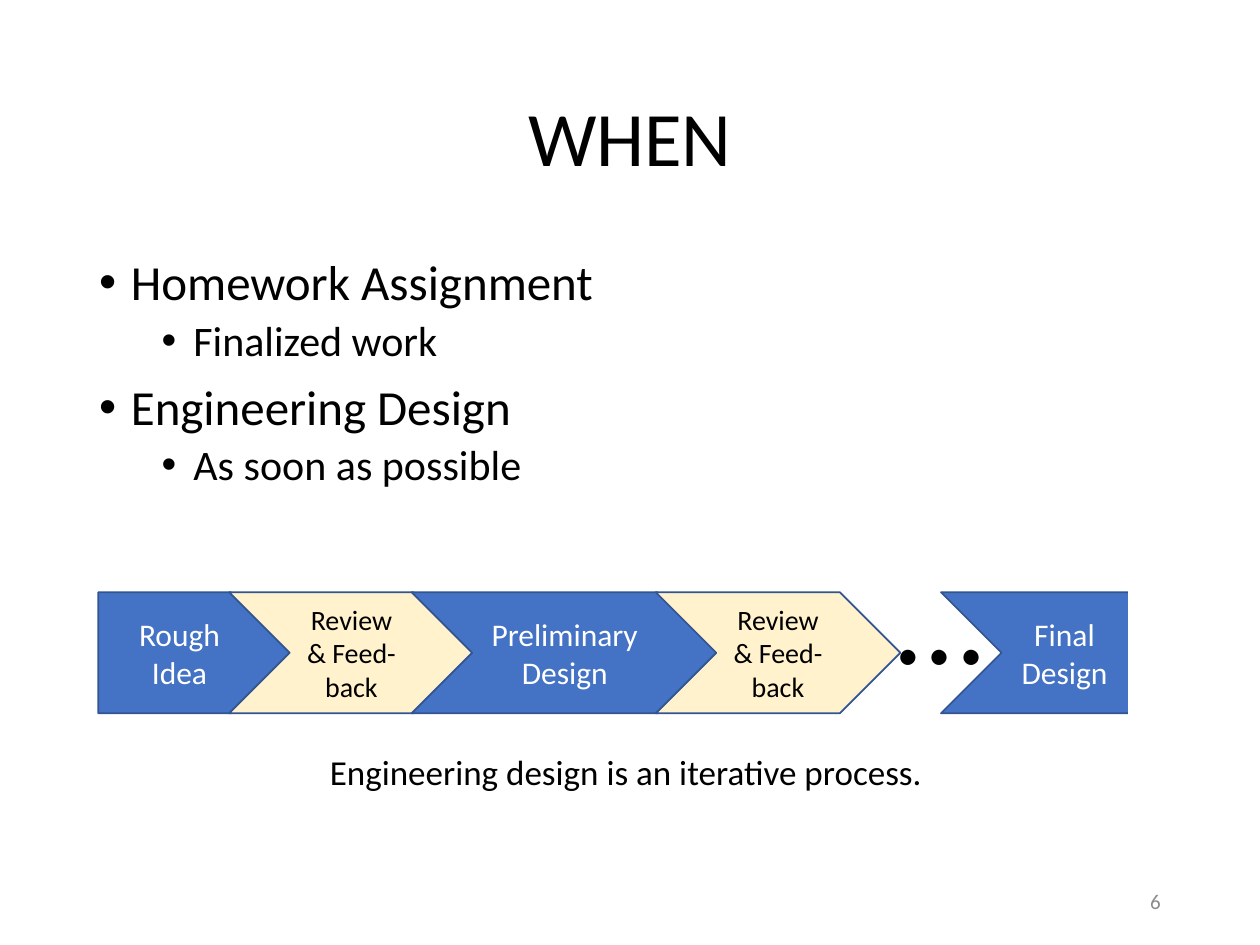
from lxml.etree import SubElement
from pptx import Presentation
from pptx.dml.color import RGBColor
from pptx.enum.shapes import MSO_SHAPE as Shape
from pptx.enum.text import MSO_ANCHOR as Anchor, PP_ALIGN as Align
from pptx.oxml.ns import qn
from pptx.util import Cm, Pt

FONT = "Calibri"
BLACK, WHITE, GREY = "000000", "FFFFFF", "8C8C8C"
BLUE, CREAM, OUTLINE = "4472C4", "FFF2CC", "325491"

ROW_LEFT, ROW_TOP, ROW_HEIGHT = 1.98, 11.94, 2.44
OVERLAP = 1.25

# level: text size, space before, left margin
LEVELS = {0: (28, 10, 0.64), 1: (24, 5, 1.9)}
BULLETS = [
    (0, "Homework Assignment"),
    (1, "Finalized work"),
    (0, "Engineering Design"),
    (1, "As soon as possible"),
]

DRAFT = {"fill": BLUE, "size": 18, "color": WHITE}
REVIEW = {"fill": CREAM, "size": 16, "color": BLACK}
# text, preset, width, gap to the next step, look
STEPS = [
    ("Rough Idea", Shape.PENTAGON, 3.89, -OVERLAP, DRAFT),
    ("Review & Feed- back", Shape.CHEVRON, 4.93, -OVERLAP, REVIEW),
    ("Preliminary Design", Shape.CHEVRON, 6.17, -OVERLAP, DRAFT),
    ("Review & Feed- back", Shape.CHEVRON, 4.93, 0.82, REVIEW),
    ("Final Design", Shape.CHEVRON, 4.98, 0, DRAFT),
]


def rgb(color):
    return RGBColor.from_string(color)


def lengths(*values):
    return [Cm(value) for value in values]


def write(para, text, size, color=BLACK, **formats):
    """Add a run to the paragraph and set the paragraph's formats."""
    for name, value in formats.items():
        setattr(para, name, value)
    span = para.add_run()
    span.text = text
    for name, value in {"name": FONT, "size": Pt(size)}.items():
        setattr(span.font, name, value)
    span.font.color.rgb = rgb(color)


def add_title(page, text):
    title = page.shapes.title
    place = zip(("left", "top", "width", "height"),
                lengths(1.75, 1.02, 21.9, 3.68))
    for name, value in place:
        setattr(title, name, value)
    title.text_frame.vertical_anchor = Anchor.MIDDLE
    write(title.text_frame.paragraphs[0], text, 44,
          alignment=Align.CENTER, line_spacing=0.9)


def add_text(page, place, text, size, color=BLACK, wrap=False,
             anchor=Anchor.TOP, align=Align.LEFT):
    frame = page.shapes.add_textbox(*lengths(*place)).text_frame
    frame.word_wrap = wrap
    frame.vertical_anchor = anchor
    write(frame.paragraphs[0], text, size, color, alignment=align)


def set_bullet(para, margin):
    properties = para._p.get_or_add_pPr()
    properties.set("marL", str(Cm(margin)))
    properties.set("indent", str(-Cm(0.64)))
    SubElement(properties, qn("a:buFont")).set("typeface", "Arial")
    SubElement(properties, qn("a:buChar")).set("char", "•")


def add_bullets(page, place, items):
    frame = page.shapes.add_textbox(*lengths(*place)).text_frame
    frame.word_wrap = True
    for index, (level, text) in enumerate(items):
        para = frame.add_paragraph() if index else frame.paragraphs[0]
        size, before, margin = LEVELS[level]
        set_bullet(para, margin)
        write(para, text, size, level=level, line_spacing=0.9,
              space_before=Pt(before if index else 0))


def add_block(page, preset, place, fill, line):
    block = page.shapes.add_shape(preset, *lengths(*place))
    block.shadow.inherit = False
    block.fill.solid()
    block.fill.fore_color.rgb = rgb(fill)
    block.line.color.rgb = rgb(line)
    block.line.width = Pt(1)
    return block


def add_process(page):
    left = ROW_LEFT
    for text, preset, width, gap, look in STEPS:
        block = add_block(page, preset, (left, ROW_TOP, width, ROW_HEIGHT),
                          look["fill"], OUTLINE)
        frame = block.text_frame
        frame.word_wrap = True
        frame.vertical_anchor = Anchor.MIDDLE
        write(frame.paragraphs[0], text, look["size"], look["color"],
              alignment=Align.CENTER)
        left += width + gap
    # Cuts the last chevron off straight
    add_block(page, Shape.RECTANGLE, (22.76, 11.48, 1.75, 3.35), WHITE, WHITE)
    add_text(page, (17.83, 10.74, 2.29, 3.33), "…", 72)


def main():
    deck = Presentation()
    deck.slide_width, deck.slide_height = lengths(25.4, 19.05)
    page = deck.slides.add_slide(deck.slide_layouts[5])
    add_title(page, "WHEN")
    add_bullets(page, (1.75, 5.08, 21.9, 5.13), BULLETS)
    add_process(page)
    add_text(page, (6.4, 15.01, 12.57, 1.12),
             "Engineering design is an iterative process.", 20)
    add_text(page, (17.93, 17.65, 5.72, 1.02), "6", 12, GREY, wrap=True,
             anchor=Anchor.MIDDLE, align=Align.RIGHT)
    deck.save("out.pptx")


if __name__ == "__main__":
    main()
